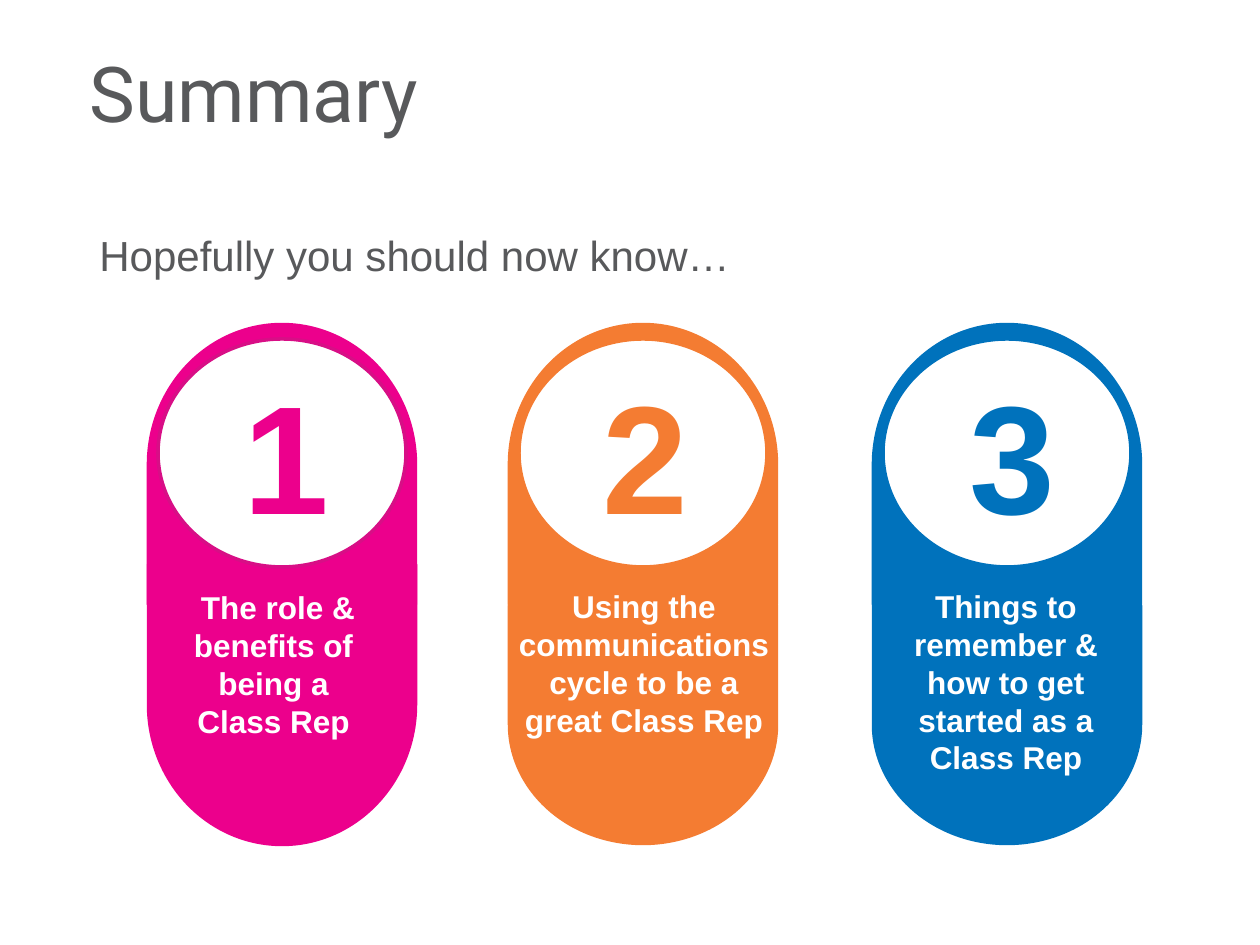
"""Build the Summary slide with three numbered capsules."""
import pptx
import pptx.dml.color
import pptx.enum.shapes
import pptx.enum.text
import pptx.util

SCALE = 914400 / 126
COLOURS = {
    "grey": "58595B",
    "white": "FFFFFF",
    "pink": "EC008C",
    "pink edge": "D80E86",
    "orange": "F47C32",
    "blue": "0072BC",
}
SHAPES = pptx.enum.shapes.MSO_SHAPE
ALIGN = pptx.enum.text.PP_ALIGN
FIT = pptx.enum.text.MSO_AUTO_SIZE


def write(holder, text, box, size, colour, font="Arial", bold=False,
          align=ALIGN.CENTER, wrap=True, fit=FIT.SHAPE_TO_FIT_TEXT):
    holder.left, holder.top, holder.width, holder.height = [round(v * SCALE) for v in box]
    frame = holder.text_frame
    frame.text = text
    frame.word_wrap = wrap
    frame.auto_size = fit
    for paragraph in frame.paragraphs:
        paragraph.alignment = align
        paragraph.font.name = font
        paragraph.font.size = pptx.util.Pt(size)
        paragraph.font.bold = bold
        paragraph.font.color.rgb = pptx.dml.color.RGBColor.from_string(COLOURS[colour])


def draw(kind, centre, top, width, height, fill, edge, turn=0):
    box = (centre - width / 2, top, width, height)
    part = slide.shapes.add_shape(kind, *[round(v * SCALE) for v in box])
    part.rotation = turn
    part.shadow.inherit = False
    part.fill.solid()
    part.fill.fore_color.rgb = pptx.dml.color.RGBColor.from_string(COLOURS[fill])
    part.line.color.rgb = pptx.dml.color.RGBColor.from_string(COLOURS[edge])
    part.line.width = pptx.util.Pt(2)


deck = pptx.Presentation()
deck.slide_width = round(1260 * SCALE)
deck.slide_height = round(945 * SCALE)
slide = deck.slides.add_slide(deck.slide_layouts[5])

write(slide.shapes.title, "Summary", (77, 37, 844, 110), 44, "grey",
      font="Roboto", align=ALIGN.LEFT, fit=FIT.NONE)

capsules = [
    ("1", "The role & benefits of \nbeing a \nClass Rep ",
     "pink", "pink edge", 282, 571, 280, 286, 278, 305, 582),
    ("2", "Using the communications cycle to be a great Class Rep",
     "orange", "orange", 643, 591, 238, 645, 644, 290, 581),
    ("3", "Things to remember & how to get started as a Class Rep",
     "blue", "blue", 1007, 591, 238, 1012, 1006, 280, 581),
]
for (number, lesson, colour, ring, centre, base_top, base_width,
     number_centre, lesson_centre, lesson_width, lesson_top) in capsules:
    draw(SHAPES.FLOWCHART_DELAY, centre, 331, 280, 267, colour, colour, turn=270)
    draw(SHAPES.FLOWCHART_DELAY, centre, base_top, base_width, 267, colour, colour, turn=90)
    draw(SHAPES.OVAL, centre, 339, 248, 228, "white", ring)
    write(slide.shapes.add_textbox(0, 0, 0, 0), number,
          (number_centre - 131, 354, 262, 199), 88, colour, bold=True)
    write(slide.shapes.add_textbox(0, 0, 0, 0), lesson,
          (lesson_centre - lesson_width / 2, lesson_top, lesson_width, 165),
          18, "white", bold=True)

write(slide.shapes.add_textbox(0, 0, 0, 0), "Hopefully you should now know…",
      (87, 223, 663, 63), 24, "grey", align=ALIGN.LEFT, wrap=False)

deck.save("out.pptx")
